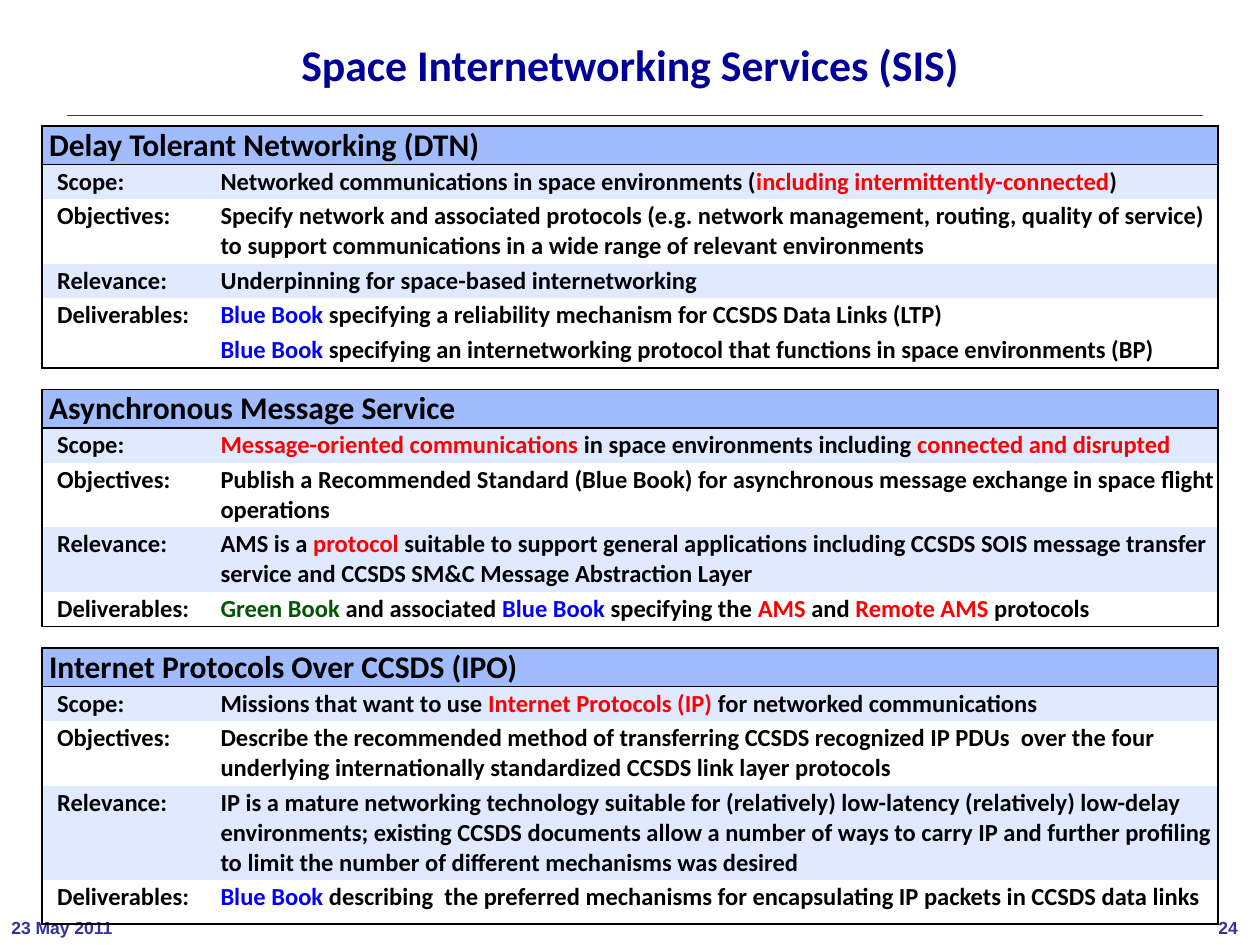
"""Build the Space Internetworking Services slide."""
from dataclasses import dataclass

from lxml import etree
from pptx import Presentation
from pptx.dml.color import RGBColor
from pptx.enum.shapes import MSO_CONNECTOR
from pptx.enum.text import MSO_ANCHOR, PP_ALIGN
from pptx.oxml.ns import qn
from pptx.util import Pt

STRAIGHT = MSO_CONNECTOR.STRAIGHT
LEFT, CENTER = PP_ALIGN.LEFT, PP_ALIGN.CENTER
TOP, MIDDLE = MSO_ANCHOR.TOP, MSO_ANCHOR.MIDDLE
PLAIN_TABLE = "{2D5ABB26-0587-4C30-8999-92F81FD0307C}"


@dataclass(frozen=True)
class Theme:
    """Colours, fonts and type sizes."""
    black: str = "000000"
    red: str = "FF0000"
    blue: str = "0000FF"
    green: str = "005700"
    navy: str = "000099"
    footer: str = "333399"
    heading_fill: str = "A0BCFE"
    band_fill: str = "DFE9FF"
    body_font: str = "Calibri"
    footer_font: str = "Arial"
    title_size: int = 25
    heading_size: int = 18
    body_size: int = 14
    footer_size: int = 10
    gap_size: int = 6


T = Theme()
TITLE = "Space Internetworking Services (SIS)"
FOOTERS = [("24", 689.76, 25.2), ("23 May 2011", 0, 71.28)]
BLUE_BOOK = ("Blue Book ", T.blue)

# Each entry: label, lines of text shown, paragraphs made of runs
SECTIONS = [
    ("Delay Tolerant Networking (DTN)", [
        ("Scope:", 1, [["Networked communications in space environments (",
                        ("including intermittently-connected", T.red), ")"]]),
        ("Objectives:", 2, [["Specify network and associated protocols (e.g. network management, routing, "
                             "quality of service) to support communications in a wide range of relevant "
                             "environments"]]),
        ("Relevance:", 1, [["Underpinning for space-based internetworking"]]),
        ("Deliverables:", 2, [
            [BLUE_BOOK, "specifying a reliability mechanism for CCSDS Data Links (LTP)"],
            [BLUE_BOOK, "specifying an internetworking protocol that functions in space environments (BP)"]]),
    ]),
    ("Asynchronous Message Service", [
        ("Scope:", 1, [[("Message-oriented communications ", T.red), "in space environments including ",
                        ("connected and disrupted", T.red)]]),
        ("Objectives:", 2, [["Publish a Recommended Standard (Blue Book) for asynchronous message exchange "
                             "in space flight operations"]]),
        ("Relevance:", 2, [["AMS is a ", ("protocol", T.red),
                            " suitable to support general applications including CCSDS SOIS message "
                            "transfer service and CCSDS SM&C Message Abstraction Layer"]]),
        ("Deliverables:", 1, [[("Green Book ", T.green), "and associated ", BLUE_BOOK, "specifying the ",
                               ("AMS", T.red), " and ", ("Remote AMS", T.red), " protocols"]]),
    ]),
    ("Internet Protocols Over CCSDS (IPO)", [
        ("Scope:", 1, [["Missions that want to use ", ("Internet Protocols (IP) ", T.red),
                        "for networked communications"]]),
        ("Objectives:", 2, [["Describe the recommended method of transferring CCSDS recognized IP PDUs  over "
                             "the four underlying internationally standardized CCSDS link layer protocols"]]),
        ("Relevance:", 3, [["IP is a mature networking technology suitable for (relatively) low-latency "
                            "(relatively) low-delay environments; existing CCSDS documents allow a number of "
                            "ways to carry IP and further profiling to limit the number of different "
                            "mechanisms was desired"]]),
        ("Deliverables:", 1, [[BLUE_BOOK, "describing  the preferred mechanisms for encapsulating IP packets "
                               "in CCSDS data links"]]),
    ]),
]
TABLE_LEFT, TABLE_TOP = 24, 72
COLUMN_WIDTHS = (102, 570)
HEADING_HEIGHT, GAP_HEIGHT, LAST_HEIGHT = 22, 12.5, 25.2
LINE_HEIGHT, CELL_MARGIN, PARAGRAPH_GAP = 17.05, 1.37, 3


def write(frame, paragraphs, size=T.body_size, color=T.black, font=T.body_font, align=LEFT, spacing=None):
    """Write paragraphs of plain or coloured runs in bold."""
    for index, runs in enumerate(paragraphs):
        paragraph = frame.paragraphs[0] if index == 0 else frame.add_paragraph()
        paragraph.alignment = align
        if spacing:
            paragraph.line_spacing = spacing
        if index:
            paragraph.space_before = Pt(PARAGRAPH_GAP)
        for part in runs:
            words, tint = (part, color) if isinstance(part, str) else part
            run = paragraph.add_run()
            run.text = words
            run.font.size, run.font.bold, run.font.name = Pt(size), True, font
            run.font.color.rgb = RGBColor.from_string(tint)


def add_label(slide, words, box, anchor, margins, **style):
    frame = slide.shapes.add_textbox(*map(Pt, box)).text_frame
    frame.word_wrap = True
    frame.vertical_anchor = anchor
    frame.margin_left, frame.margin_right, frame.margin_top, frame.margin_bottom = map(Pt, margins)
    write(frame, [[words]], **style)


def format_cell(cell, sides, fill=None, left=0, vertical=0):
    cell.margin_left, cell.margin_right = Pt(left), 0
    cell.margin_top = cell.margin_bottom = Pt(vertical)
    properties = cell._tc.get_or_add_tcPr()
    for side in "LRTB":
        line = etree.SubElement(properties, qn(f"a:ln{side}"), w=str(Pt(1)))
        if side in sides:
            solid = etree.SubElement(line, qn("a:solidFill"))
            etree.SubElement(solid, qn("a:srgbClr"), val=T.black)
        else:
            etree.SubElement(line, qn("a:noFill"))
    if fill:
        cell.fill.solid()
        cell.fill.fore_color.rgb = RGBColor.from_string(fill)
    else:
        cell.fill.background()


def add_gap(table, row):
    table.rows[row].height = Pt(GAP_HEIGHT)
    for cell in table.rows[row].cells:
        format_cell(cell, "TB")
        paragraph = cell.text_frame.paragraphs[0]._p
        etree.SubElement(paragraph, qn("a:endParaRPr"), sz=str(T.gap_size * 100))
    table.cell(row, 0).merge(table.cell(row, 1))


def add_heading(table, row, heading):
    table.rows[row].height = Pt(HEADING_HEIGHT)
    for cell in table.rows[row].cells:
        format_cell(cell, "LRTB", T.heading_fill, left=4)
    table.cell(row, 0).merge(table.cell(row, 1))
    write(table.cell(row, 0).text_frame, [[heading]], size=T.heading_size)


def add_entry(table, row, entry, position, count):
    label, lines, paragraphs = entry
    table.rows[row].height = Pt(2 * CELL_MARGIN + lines * LINE_HEIGHT + (len(paragraphs) - 1) * PARAGRAPH_GAP)
    edges = ("T" if position == 0 else "") + ("B" if position == count - 1 else "")
    fill = None if position % 2 else T.band_fill
    columns = ((("L", 8.64), [[label]]), (("R", 0), paragraphs))
    for cell, ((side, indent), content) in zip(table.rows[row].cells, columns):
        format_cell(cell, side + edges, fill, left=indent, vertical=CELL_MARGIN)
        write(cell.text_frame, content)


def add_services(slide):
    row_count = sum(len(entries) + 2 for _, entries in SECTIONS) - 1
    frame = slide.shapes.add_table(row_count, 2, Pt(TABLE_LEFT), Pt(TABLE_TOP),
                                   Pt(sum(COLUMN_WIDTHS)), Pt(451))
    table = frame.table
    table.first_row = table.horz_banding = False
    table._tbl.tblPr.find(qn("a:tableStyleId")).text = PLAIN_TABLE
    for column, width in zip(table.columns, COLUMN_WIDTHS):
        column.width = Pt(width)
    row = 0
    for heading, entries in SECTIONS:
        if row:
            add_gap(table, row)
            row += 1
        add_heading(table, row, heading)
        for position, entry in enumerate(entries):
            add_entry(table, row + 1 + position, entry, position, len(entries))
        row += 1 + len(entries)
    table.rows[row_count - 1].height = Pt(LAST_HEIGHT)


def main():
    deck = Presentation()
    deck.slide_width, deck.slide_height = Pt(720), Pt(540)
    slide = deck.slides.add_slide(deck.slide_layouts[6])
    rule = slide.shapes.add_connector(STRAIGHT, Pt(38.16), Pt(66), Pt(687.6), Pt(66))
    rule.line.color.rgb = RGBColor.from_string(T.footer)
    rule.line.width = Pt(0.13)
    etree.SubElement(rule._element.spPr, qn("a:effectLst"))
    for words, left, width in FOOTERS:
        add_label(slide, words, (left, 521.28, width, 18.72), TOP, (6.48, 0, 2.88, 2.88),
                  size=T.footer_size, color=T.footer, font=T.footer_font)
    add_label(slide, TITLE, (36, 19.4, 648, 38.16), MIDDLE, (7.2, 7.2, 3.6, 3.6),
              size=T.title_size, color=T.navy, align=CENTER, spacing=0.9)
    add_services(slide)
    deck.save("out.pptx")


if __name__ == "__main__":
    main()
